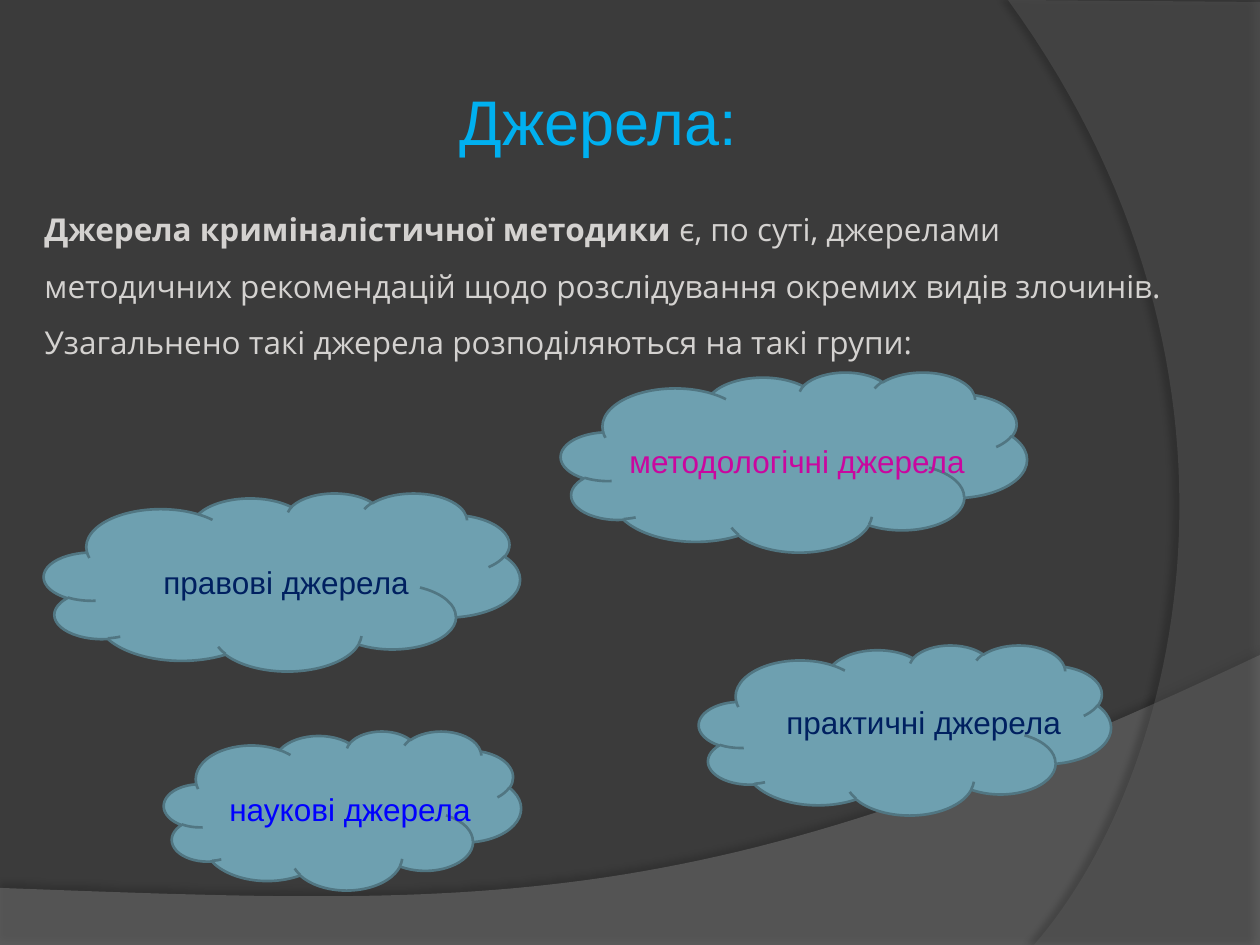
from lxml import etree
from pptx import Presentation, util as u
from pptx.dml.color import RGBColor
from pptx.enum import shapes, text
from pptx.oxml.ns import qn

SCALE = u.Inches(1) / 126  # EMU in one px
NAVY = "002060"


def px(*lengths):
    return [u.Emu(round(length * SCALE)) for length in lengths]


def colour(value):
    return RGBColor.from_string(value)


def apply(target, values):
    for name, value in values.items():
        setattr(target, name, value)


def bezier(start, control_1, control_2, end, steps=60):
    """Points after start on a cubic curve."""
    points = []
    for step in range(1, steps + 1):
        t = step / steps
        weights = (1 - t) ** 3, 3 * t * (1 - t) ** 2, 3 * t * t * (1 - t), t ** 3
        corners = start, control_1, control_2, end
        points.append(tuple(sum(w * c[axis] for w, c in zip(weights, corners))
                            for axis in (0, 1)))
    return points


class SlideBuilder:
    FRAME = {"word_wrap": False, "vertical_anchor": text.MSO_ANCHOR.TOP,
             "auto_size": text.MSO_AUTO_SIZE.SHAPE_TO_FIT_TEXT}
    LABEL = {"name": "Arial", "size": u.Pt(18), "bold": False}
    BODY = {"name": "Open Sans", "size": u.Pt(18)}
    TITLE = {**LABEL, "size": u.Pt(36)}

    def __init__(self, deck):
        self.page = deck.slides.add_slide(deck.slide_layouts[5])
        self.background("3B3B3B")

    def background(self, value):
        fill = self.page.background.fill
        fill.solid()
        fill.fore_color.rgb = colour(value)

    def set_text(self, box, runs, style, value, wrap=False, spacing=1.0):
        """Fill a box with one paragraph of (wording, bold) runs."""
        apply(box.text_frame, {**self.FRAME, "word_wrap": wrap})
        para = box.text_frame.paragraphs[0]
        apply(para, {"alignment": text.PP_ALIGN.LEFT, "line_spacing": spacing})
        for wording, bold in runs:
            span = para.add_run()
            span.text = wording
            apply(span.font, {**style, "bold": bold})
            span.font.color.rgb = colour(value)

    def title(self, place, wording, value):
        box = self.page.shapes.title
        apply(box, dict(zip(("left", "top", "width", "height"), px(*place))))
        self.set_text(box, [(wording, False)], self.TITLE, value)

    def body(self, place, runs, value):
        box = self.page.shapes.add_textbox(*px(*place))
        self.set_text(box, runs, self.BODY, value, wrap=True, spacing=1.5)

    def label(self, place, wording, value):
        box = self.page.shapes.add_textbox(*px(*place))
        self.set_text(box, [(wording, False)], self.LABEL, value)

    def cloud(self, place):
        cloud = self.page.shapes.add_shape(shapes.MSO_SHAPE.CLOUD, *px(*place))
        cloud.shadow.inherit = False
        cloud.fill.solid()
        cloud.fill.fore_color.rgb = colour("6EA0B0")
        cloud.line.color.rgb = colour("517682")
        cloud.line.width = u.Pt(1.5)

    def swoosh(self, points, value, opacity, shadow):
        """Translucent outline; shadow is opacity %, distance pt, angle in degrees."""
        points = [px(*point) for point in points]
        builder = self.page.shapes.build_freeform(*points[0], scale=1.0)
        builder.add_line_segments(points[1:], close=True)
        shape = builder.convert_to_shape()
        shape.fill.solid()
        shape.fill.fore_color.rgb = colour(value)
        shape.line.fill.background()
        shape.shadow.inherit = False
        properties = shape._element.spPr
        tint = properties.find(qn("a:solidFill")).find(qn("a:srgbClr"))
        etree.SubElement(tint, qn("a:alpha"), val=str(opacity * 1000))
        darkness, distance, angle = shadow
        outer = etree.SubElement(
            properties.find(qn("a:effectLst")), qn("a:outerShdw"),
            blurRad=str(u.Pt(4)), dist=str(u.Pt(distance)),
            dir=str(angle * 60000), algn="ctr", rotWithShape="0")
        black = etree.SubElement(outer, qn("a:srgbClr"), val="000000")
        etree.SubElement(black, qn("a:alpha"), val=str(darkness * 1000))


def main():
    deck = Presentation()
    deck.slide_width, deck.slide_height = px(1260, 945)
    slide = SlideBuilder(deck)

    slide.swoosh([(0, 888), (0, 946), (1260, 946), (1260, 655),
                  *bezier((1260, 655), (704, 919), (493, 906), (0, 888))],
                 "7F7F7F", 45, (35, 3.5, 270))
    slide.swoosh([(1260, 2), (1260, 945), (1034, 945),
                  *bezier((1034, 945), (1178, 780), (1283, 378), (1008, 0))],
                 "5E5E5E", 40, (45, 4, 180))

    sources = [
        ((164, 731, 357, 159), (217, 784, 270, 50), "наукові джерела", "0000FF"),
        ((699, 645, 412, 170), (774, 697, 311, 50), "практичні джерела", NAVY),
        ((44, 493, 476, 178), (151, 557, 282, 50), "правові джерела", NAVY),
        ((561, 372, 466, 180), (617, 436, 373, 50), "методологічні джерела", "C9079F"),
    ]
    for cloud_place, label_place, wording, value in sources:
        slide.cloud(cloud_place)
        slide.label(label_place, wording, value)

    slide.body((32, 185, 1164, 184), [
        ("Джерела криміналістичної методики", True),
        (" є, по суті, джерелами методичних рекомендацій щодо розслідування "
         "окремих видів злочинів. Узагальнено такі джерела розподіляються "
         "на такі групи:", False)], "D4D2D0")
    slide.title((447, 76, 305, 89), "Джерела:", "00B0F0")
    deck.save("out.pptx")


if __name__ == "__main__":
    main()
